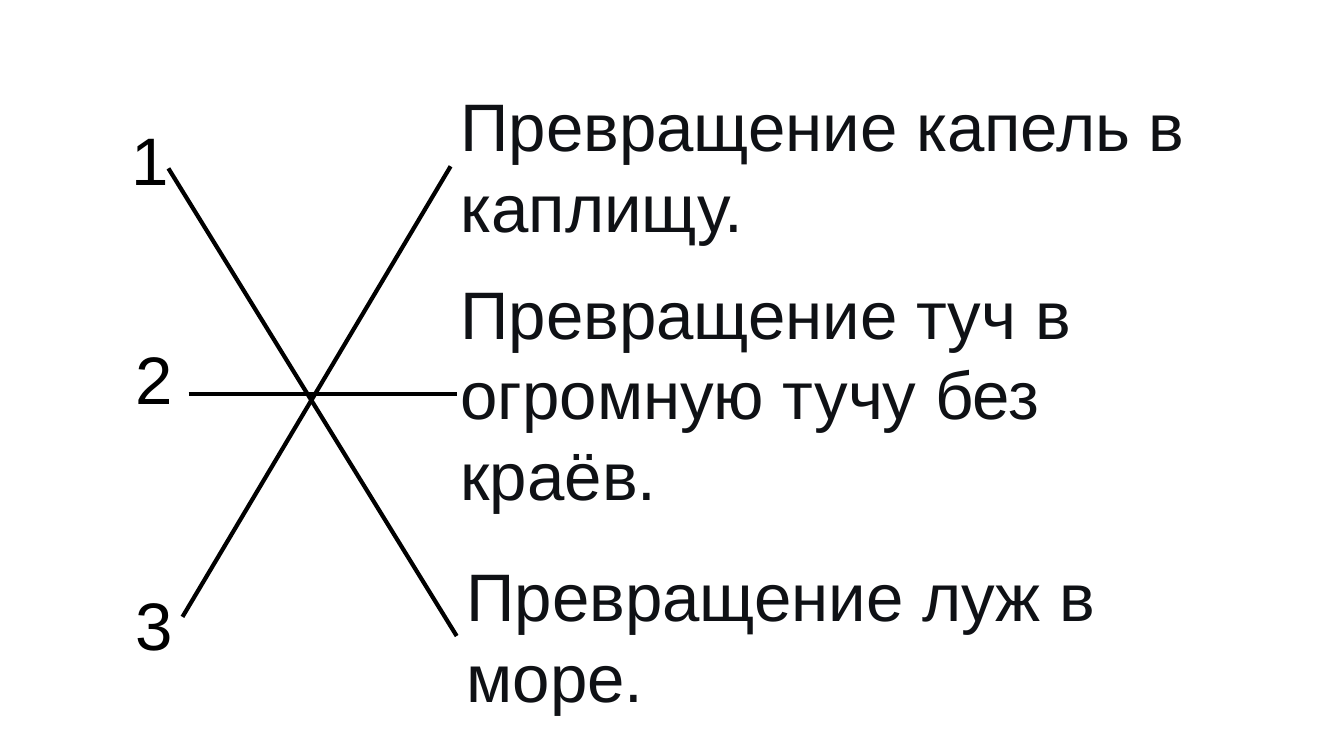
from dataclasses import dataclass

from lxml import etree
from pptx import Presentation
from pptx.dml.color import RGBColor
from pptx.enum.shapes import MSO_CONNECTOR
from pptx.enum.text import MSO_AUTO_SIZE
from pptx.oxml.ns import qn
from pptx.util import Inches, Pt

STRAIGHT = MSO_CONNECTOR.STRAIGHT
GROW = MSO_AUTO_SIZE.SHAPE_TO_FIT_TEXT
LEFT = 1
WIDE, HIGH = Inches(13.33), Inches(7.5)
COLORS = {"black": "000000", "ink": "0F1115"}
FONT = {"name": "Arial", "size": Pt(48)}
FRAME = {"word_wrap": True, "auto_size": GROW}


@dataclass
class Label:
    """Text with its box in percent of the slide's width and height."""
    text: str
    x: float
    y: float
    w: float
    h: float
    color: str


@dataclass
class Link:
    """Line from a number to an answer, ends in percent of the slide."""
    x: float
    y: float
    to_x: float
    to_y: float
    answer: str = ""


ONE_ROW, TWO_ROWS, THREE_ROWS = 12.13, 22.93, 33.6
DROPS = "Превращение капель в каплищу."
CLOUDS = "Превращение туч в огромную тучу без краёв."
PUDDLES = "Превращение луж в море."

LABELS = [
    Label("1", 9.08, 14.93, 8.4, ONE_ROW, "black"),
    Label("2", 9.38, 44, 6.08, ONE_ROW, "black"),
    Label("3", 9.38, 76.53, 6.08, ONE_ROW, "black"),
    Label(PUDDLES, 33.98, 72.67, 55.81, TWO_ROWS, "ink"),
    Label(CLOUDS, 33.53, 35.33, 54.31, THREE_ROWS, "ink"),
    Label(DROPS, 33.53, 10.53, 59.71, TWO_ROWS, "ink"),
]
LINKS = [
    Link(12.53, 22.27, 33.98, 84, PUDDLES),
    Link(13.58, 81.6, 33.53, 22, DROPS),
    Link(14.03, 52.13, 33.98, 52.13),
]


def across(share: float) -> int:
    return round(WIDE * share / 100)


def down(share: float) -> int:
    return round(HIGH * share / 100)


def add_label(slide, label: Label):
    box = slide.shapes.add_textbox(across(label.x), down(label.y),
                                   across(label.w), down(label.h))
    frame = box.text_frame
    for key, value in FRAME.items():
        setattr(frame, key, value)
    run = frame.paragraphs[0].add_run()
    run.text = label.text
    for key, value in FONT.items():
        setattr(run.font, key, value)
    run.font.color.rgb = RGBColor.from_string(COLORS[label.color])
    return box


def add_link(slide, link: Link, boxes: dict) -> None:
    line = slide.shapes.add_connector(STRAIGHT, across(link.x), down(link.y),
                                      across(link.to_x), down(link.to_y))
    if link.answer:
        line.end_connect(boxes[link.answer], LEFT)
    line.line.width = Pt(3)
    line.line.color.rgb = RGBColor.from_string(COLORS["black"])
    etree.SubElement(line._element.spPr, qn("a:effectLst"))


def main() -> None:
    deck = Presentation()
    deck.slide_width, deck.slide_height = WIDE, HIGH
    slide = deck.slides.add_slide(deck.slide_layouts[6])
    boxes = {label.text: add_label(slide, label) for label in LABELS}
    for link in LINKS:
        add_link(slide, link, boxes)
    deck.save("out.pptx")


if __name__ == "__main__":
    main()
